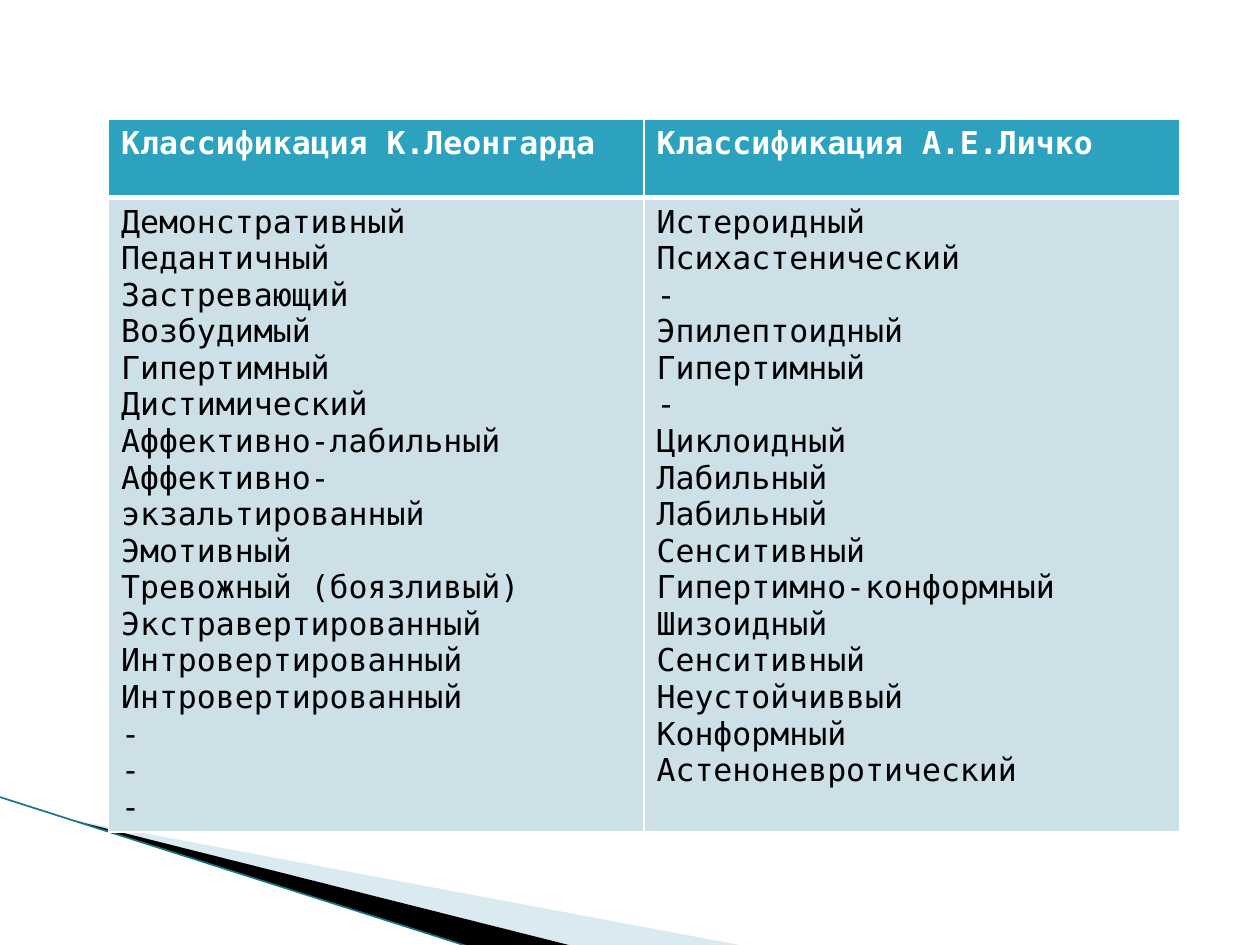
from lxml import etree
from pptx import Presentation
from pptx.dml.color import RGBColor
from pptx.enum.shapes import MSO_CONNECTOR
from pptx.oxml.ns import qn
from pptx.util import Pt

STRAIGHT = MSO_CONNECTOR.STRAIGHT
FONT = "DejaVu Sans Mono"
COLORS = {
    "header": "2DA2BF",
    "body": "CDE0E8",
    "white": "FFFFFF",
    "black": "000000",
    "wave": "A0CBDC",
    "edge": "1A7488",
}
HEADER_FORMAT = {"size": Pt(18), "name": FONT, "bold": True}
BODY_FORMAT = {"size": Pt(18), "name": FONT, "bold": False}

COLUMNS = [
    ("Классификация К.Леонгарда", [
        "Демонстративный", "Педантичный", "Застревающий", "Возбудимый",
        "Гипертимный", "Дистимический", "Аффективно-лабильный",
        "Аффективно-экзальтированный", "Эмотивный", "Тревожный (боязливый)",
        "Экстравертированный", "Интровертированный", "Интровертированный",
        "-", "-", "-",
    ]),
    ("Классификация А.Е.Личко", [
        "Истероидный", "Психастенический", "-", "Эпилептоидный",
        "Гипертимный", "-", "Циклоидный", "Лабильный", "Лабильный",
        "Сенситивный", "Гипертимно-конформный", "Шизоидный", "Сенситивный",
        "Неустойчиввый", "Конформный", "Астеноневротический",
    ]),
]


def rgb(name):
    return RGBColor.from_string(COLORS[name])


def add_wedge(page, points, color, opacity=None):
    builder = page.shapes.build_freeform(*points[0], scale=Pt(1))
    builder.add_line_segments(points[1:], close=True)
    wedge = builder.convert_to_shape()
    wedge.shadow.inherit = False
    wedge.fill.solid()
    wedge.fill.fore_color.rgb = rgb(color)
    wedge.line.fill.background()
    if opacity is not None:
        srgb = wedge.fill._xPr.find(".//" + qn("a:srgbClr"))
        etree.SubElement(srgb, qn("a:alpha"), val=str(opacity * 1000))


def add_corner(page, left, top, width, height):
    """Draw the sweeping wedges and thin edge in the lower left corner."""
    bottom = top + height
    start = left + 39
    tip = top + 12.5
    middle = left + 329
    add_wedge(page, [(start, tip), (left + width, bottom), (middle, bottom),
                     (start, tip - 0.5)], "wave", 40)
    add_wedge(page, [(start, tip - 0.5), (middle, bottom),
                     (left + 268, bottom), (start, tip)], "black")
    edge = page.shapes.add_connector(
        STRAIGHT, Pt(left), Pt(top), Pt(left + 268), Pt(bottom))
    edge.line.color.rgb = rgb("edge")
    edge.line.width = Pt(0.95)
    etree.SubElement(edge._element.spPr, qn("a:effectLst"))


def style_cell(cell, fill, top=1, bottom=1):
    """Give a cell white borders, with widths in points, and a plain fill."""
    properties = cell._tc.get_or_add_tcPr()
    for side, width in (("L", 1), ("R", 1), ("T", top), ("B", bottom)):
        border = etree.SubElement(properties, qn(f"a:ln{side}"), w=str(Pt(width)))
        solid = etree.SubElement(border, qn("a:solidFill"))
        etree.SubElement(solid, qn("a:srgbClr"), val=COLORS["white"])
    cell.fill.solid()
    cell.fill.fore_color.rgb = rgb(fill)


def write_cell(cell, lines, font_format, color):
    cell.text = "\n".join(lines)
    for para in cell.text_frame.paragraphs:
        for span in para.runs:
            for attribute, value in font_format.items():
                setattr(span.font, attribute, value)
            span.font.color.rgb = rgb(color)


def add_comparison(page, left, top, width, height, header_height):
    frame = page.shapes.add_table(
        2, len(COLUMNS), Pt(left), Pt(top), Pt(width), Pt(height))
    table = frame.table
    table.horz_banding = False
    table.rows[0].height = Pt(header_height)
    table.rows[1].height = Pt(height - header_height)
    for index, (heading, types) in enumerate(COLUMNS):
        table.columns[index].width = Pt(width / len(COLUMNS))
        header, body = table.cell(0, index), table.cell(1, index)
        style_cell(header, "header", bottom=3)
        write_cell(header, [heading], HEADER_FORMAT, "white")
        style_cell(body, "body", top=3)
        write_cell(body, types, BODY_FORMAT, "black")


def main():
    deck = Presentation()
    deck.slide_width, deck.slide_height = Pt(720), Pt(540)
    page = deck.slides.add_slide(deck.slide_layouts[6])
    add_corner(page, 0, 455.5, 428, 85.5)
    add_comparison(page, 62, 68, 612, 398, 45)
    deck.save("out.pptx")


if __name__ == "__main__":
    main()
